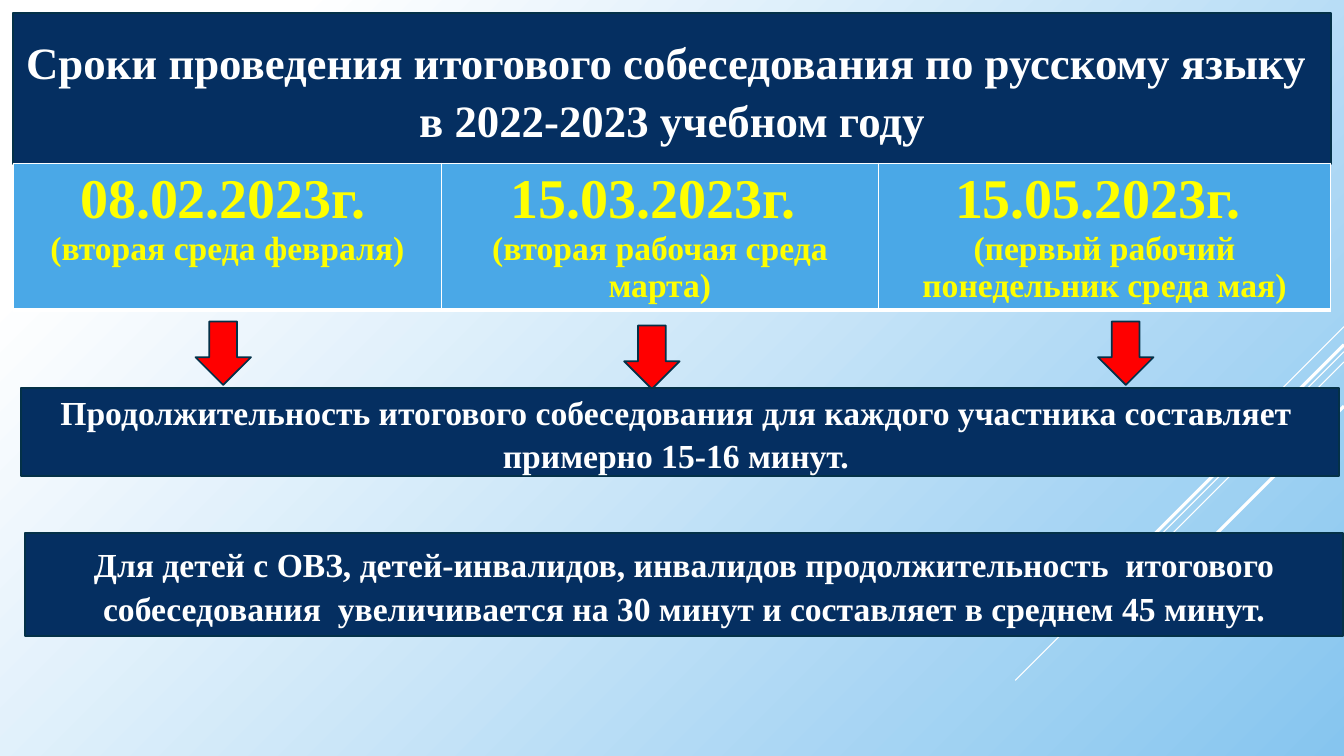
from dataclasses import dataclass

import pptx
import pptx.dml.color
import pptx.enum.shapes
import pptx.enum.text
import pptx.oxml
import pptx.oxml.ns
import pptx.util

SLIDE_WIDTH = pptx.util.Inches(13.33)
SLIDE_HEIGHT = pptx.util.Inches(7.5)
FONT = "Times New Roman"
NAVY, OUTLINE, SKY = "052F61", "043148", "4AA8E7"
WHITE, YELLOW, RED = "FFFFFF", "FFFF00", "FF0000"
PROCESS = pptx.enum.shapes.MSO_SHAPE.FLOWCHART_PROCESS
DOWN_ARROW = pptx.enum.shapes.MSO_SHAPE.DOWN_ARROW
BANNER_WIDTH = 98.05


# Positions and lengths are percentages of the slide's width and height.
@dataclass
class Banner:
    left: float
    top: float
    height: float
    size: int
    text: str


@dataclass
class Session:
    width: float
    date: str
    gap_size: int
    note: str


@dataclass
class Arrow:
    left: float
    top: float


@dataclass
class Ray:
    top: float
    run: float
    weight: float


BANNERS = [
    Banner(0.98, 1.73, 20, 32,
           "Сроки проведения итогового собеседования по русскому языку \n"
           "в 2022-2023 учебном году"),
    Banner(1.58, 51.33, 11.6, 24,
           "Продолжительность итогового собеседования для каждого участника составляет \n"
           "примерно 15-16 минут. "),
    Banner(1.88, 70.53, 13.6, 24,
           "Для детей с ОВЗ, детей-инвалидов, инвалидов продолжительность  итогового "
           "собеседования  увеличивается на 30 минут и составляет в среднем 45 минут."),
]
SESSIONS = [
    Session(31.88, "08.02.2023г.", 28, "(вторая среда февраля)"),
    Session(32.48, "15.03.2023г.", 40, "(вторая рабочая среда марта)"),
    Session(33.68, "15.05.2023г.", 40, "(первый рабочий понедельник среда мая)"),
]
ARROWS = [Arrow(14.55, 42.53), Arrow(81.7, 42.53), Arrow(46.44, 43.07)]
RAYS = [Ray(43.2, 7.5, 0.75), Ray(46.53, 24.46, 0.75), Ray(47.87, 15.53, 0.75),
        Ray(45.6, 14.33, 2.25), Ray(53.73, 10.43, 2.25)]


def across(share: float) -> int:
    return round(SLIDE_WIDTH * share / 100)


def down(share: float) -> int:
    return round(SLIDE_HEIGHT * share / 100)


def color(value: str) -> pptx.dml.color.RGBColor:
    return pptx.dml.color.RGBColor.from_string(value)


def format_run(run, size: float, text_color: str) -> None:
    run.font.name = FONT
    run.font.size = pptx.util.Pt(size)
    run.font.bold = True
    run.font.color.rgb = color(text_color)


def paint_background(slide) -> None:
    fill = slide.background.fill
    fill.gradient()
    fill.gradient_angle = 315
    for stop, position, value in zip(fill.gradient_stops, (0.14, 1), (WHITE, "86C5EF")):
        stop.position = position
        stop.color.rgb = color(value)


def draw_ray(slide, ray: Ray) -> None:
    """Draw a 45 degree line from the right edge down to the left."""
    run, top = across(ray.run), down(ray.top)
    connector = slide.shapes.add_connector(
        pptx.enum.shapes.MSO_CONNECTOR.STRAIGHT,
        SLIDE_WIDTH, top, SLIDE_WIDTH - run, top + run)
    connector.line.color.rgb = color(WHITE)
    connector.line.width = pptx.util.Pt(ray.weight)
    properties = connector._element.spPr
    properties.append(pptx.oxml.parse_xml(
        f"<a:effectLst {pptx.oxml.ns.nsdecls('a')}/>"))


def draw_shape(slide, kind, left: float, top: float, width: float, height: float,
               fill: str):
    shape = slide.shapes.add_shape(
        kind, across(left), down(top), across(width), down(height))
    shape.shadow.inherit = False
    shape.fill.solid()
    shape.fill.fore_color.rgb = color(fill)
    shape.line.color.rgb = color(OUTLINE)
    shape.line.width = pptx.util.Pt(1.25)
    return shape


def draw_banner(slide, banner: Banner) -> None:
    shape = draw_shape(slide, PROCESS, banner.left, banner.top, BANNER_WIDTH,
                       banner.height, NAVY)
    text_frame = shape.text_frame
    text_frame.word_wrap = True
    text_frame.vertical_anchor = pptx.enum.text.MSO_ANCHOR.MIDDLE
    text_frame.text = banner.text
    for paragraph in text_frame.paragraphs:
        paragraph.alignment = pptx.enum.text.PP_ALIGN.CENTER
        paragraph.line_spacing = 1.07
        for run in paragraph.runs:
            format_run(run, banner.size, WHITE)


def set_borders(cell) -> None:
    properties = cell._tc.get_or_add_tcPr()
    for index, (side, weight) in enumerate((("L", 1), ("R", 1), ("T", 1), ("B", 3))):
        properties.insert(index, pptx.oxml.parse_xml(
            f'<a:ln{side} {pptx.oxml.ns.nsdecls("a")} w="{pptx.util.Pt(weight)}">'
            f'<a:solidFill><a:srgbClr val="{WHITE}"/></a:solidFill></a:ln{side}>'))


def fill_cell(cell, session: Session) -> None:
    cell.fill.solid()
    cell.fill.fore_color.rgb = color(SKY)
    set_borders(cell)
    cell.text_frame.text = f"{session.date}\n{session.note}"
    date, note = cell.text_frame.paragraphs
    gap = date.add_run()
    gap.text = " "
    for paragraph in (date, note):
        paragraph.alignment = pptx.enum.text.PP_ALIGN.CENTER
    format_run(date.runs[0], 40, YELLOW)
    format_run(gap, session.gap_size, YELLOW)
    format_run(note.runs[0], 24, YELLOW)


def draw_sessions(slide) -> None:
    width = sum(session.width for session in SESSIONS)
    table = slide.shapes.add_table(1, len(SESSIONS), across(0.98), down(21.6),
                                   across(width), down(19.2)).table
    for index, session in enumerate(SESSIONS):
        table.columns[index].width = across(session.width)
        fill_cell(table.cell(0, index), session)


def main() -> None:
    presentation = pptx.Presentation()
    presentation.slide_width = SLIDE_WIDTH
    presentation.slide_height = SLIDE_HEIGHT
    slide = presentation.slides.add_slide(presentation.slide_layouts[6])

    # Background with slanted rays
    paint_background(slide)
    for ray in RAYS:
        draw_ray(slide, ray)

    # Title, dates, arrows and durations
    title, *durations = BANNERS
    draw_banner(slide, title)
    draw_sessions(slide)
    for arrow in ARROWS:
        draw_shape(slide, DOWN_ARROW, arrow.left, arrow.top, 4.13, 8.4, RED)
    for banner in durations:
        draw_banner(slide, banner)

    presentation.save("out.pptx")


if __name__ == "__main__":
    main()
